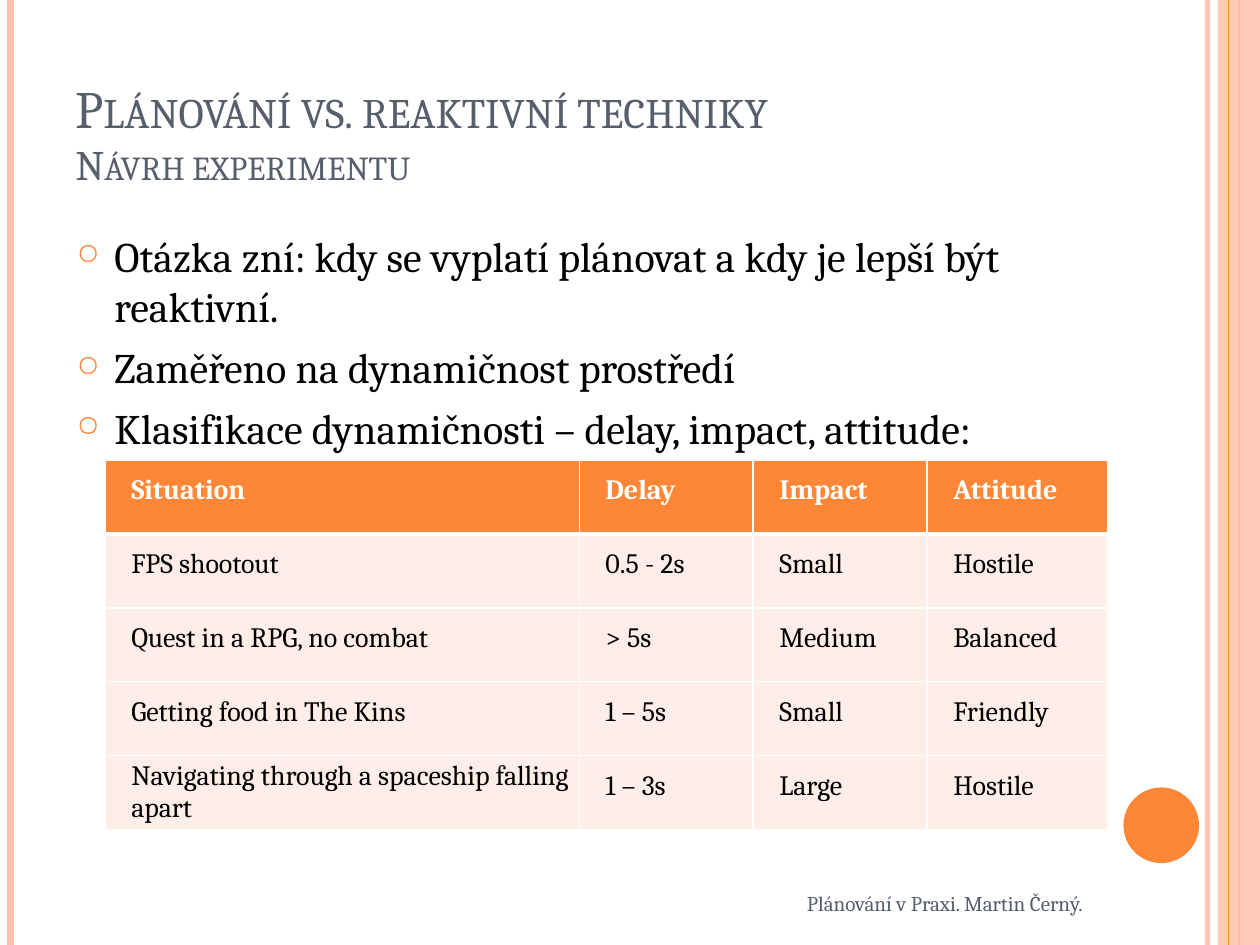
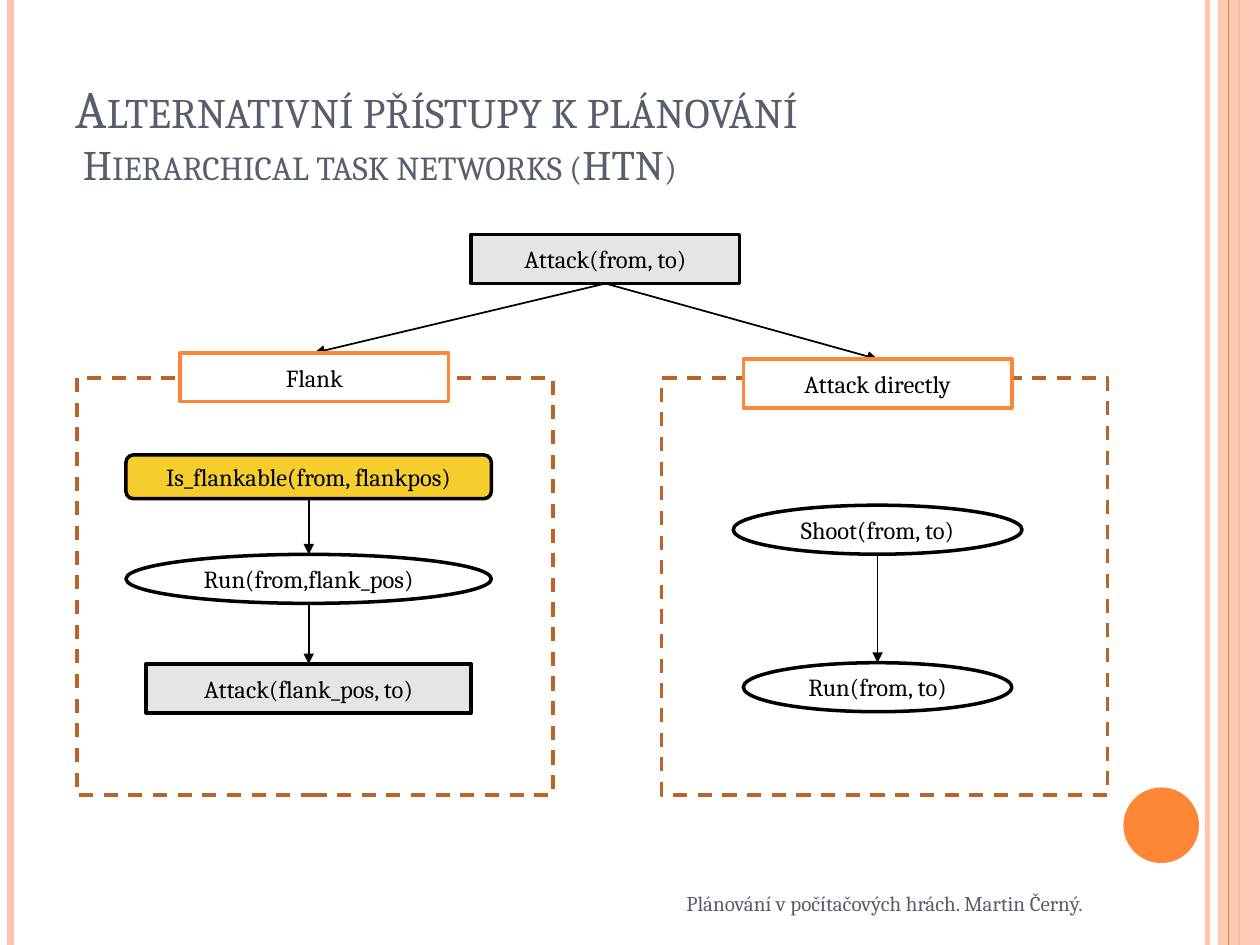
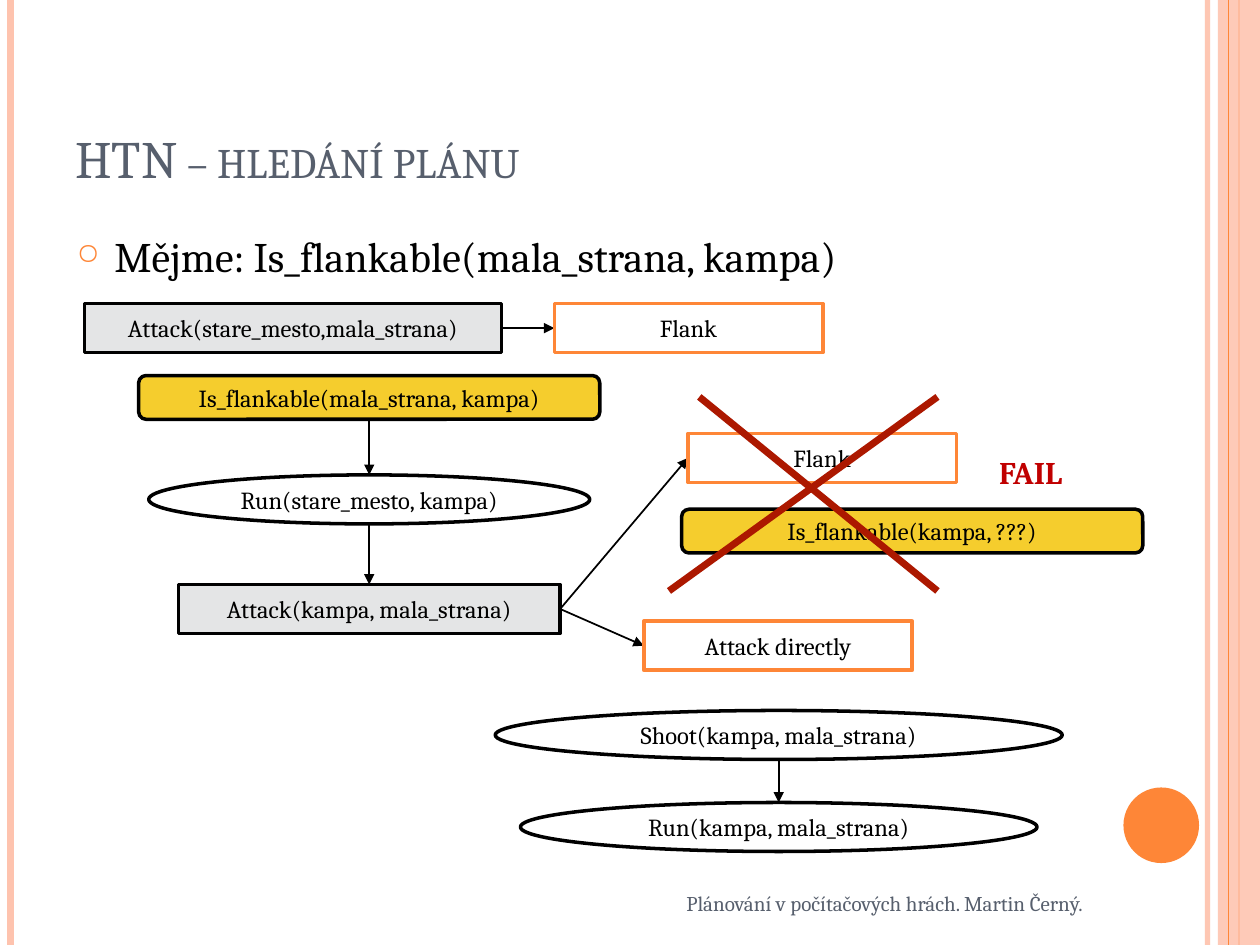
from lxml.etree import SubElement
from pptx import Presentation
from pptx.dml.color import RGBColor
from pptx.enum.dml import MSO_LINE
from pptx.enum.shapes import MSO_CONNECTOR, MSO_SHAPE
from pptx.enum.text import MSO_ANCHOR, PP_ALIGN
from pptx.oxml.ns import qn
from pptx.util import Pt

FONT = "Cambria"
INK, WHITE, SLATE = "000000", "FFFFFF", "575F6D"
ORANGE, PEACH, BLUSH, RUST = "FE8637", "FEC3AE", "FFEDE8", "BC6329"
GREY, YELLOW, RED, CROSS = "E4E5E6", "F5CD2D", "C00000", "AC1800"
WIDE, HIGH = 720, 540
RECT, OVAL, ROUND = MSO_SHAPE.RECTANGLE, MSO_SHAPE.OVAL, MSO_SHAPE.ROUNDED_RECTANGLE

# kind: (shape, fill, line, height)
KINDS = {
    "task": (RECT, GREY, INK, 28),
    "plan": (RECT, WHITE, ORANGE, 28),
    "act": (OVAL, WHITE, INK, 28),
    "test": (ROUND, YELLOW, INK, 25),
}

TALK = "Plánování v počítačových hrách. Martin Černý."

DESIGN = {
    "title": ["Plánování vs. reaktivní techniky", "Návrh experimentu"],
    "foot": "Plánování v Praxi. Martin Černý.",
    "points": [
        "Otázka zní: kdy se vyplatí plánovat a kdy je lepší být reaktivní.",
        "Zaměřeno na dynamičnost prostředí",
        "Klasifikace dynamičnosti – delay, impact, attitude:",
    ],
}
COLS = [271, 99.4, 99.4, 103.4]
ROWS = [
    ("Situation", "Delay", "Impact", "Attitude"),
    ("FPS shootout", "0.5 - 2s", "Small", "Hostile"),
    ("Quest in a RPG, no combat", "> 5s", "Medium", "Balanced"),
    ("Getting food in The Kins", "1 – 5s", "Small", "Friendly"),
    ("Navigating through a\u00a0spaceship falling apart", "1 – 3s", "Large", "Hostile"),
]

# node: (kind, text, centre x, top, width)
# link: (from node, side, to node, side)
NETWORK = {
    "title": ["Alternativní přístupy k plánování", " Hierarchical task networks (HTN)"],
    "foot": TALK,
    "panels": [(43.9, 272.2), (378, 254.9)],
    "nodes": {
        "root": ("task", "Attack(from, to)", 346, 134, 153.4),
        "flank": ("plan", "Flank", 179.7, 201.6, 153.4),
        "direct": ("plan", "Attack directly", 501.5, 205.2, 153.4),
        "check": ("test", "Is_flankable(from, flankpos)", 176.4, 260, 208.8),
        "run": ("act", "Run(from,flank_pos)", 176.4, 316.8, 208.8),
        "attack": ("task", "Attack(flank_pos, to)", 176.4, 379.4, 185.8),
        "shoot": ("act", "Shoot(from, to)", 501.5, 288.7, 165),
        "chase": ("act", "Run(from, to)", 501.5, 378.7, 153.4),
    },
    "links": [
        ("root", "bottom", "flank", "top"),
        ("root", "bottom", "direct", "top"),
        ("check", "bottom", "run", "top"),
        ("run", "bottom", "attack", "top"),
        ("shoot", "bottom", "chase", "top"),
    ],
}
SEARCH = {
    "title": ["HTN – hledání plánu"],
    "foot": TALK,
    "points": ["Mějme: Is_flankable(mala_strana, kampa)"],
    "nodes": {
        "root": ("task", "Attack(stare_mesto,mala_strana)", 167.4, 173.5, 238.3),
        "flank": ("plan", "Flank", 393.5, 173.5, 153.4),
        "check": ("test", "Is_flankable(mala_strana, kampa)", 211, 214.6, 263.5),
        "run": ("act", "Run(stare_mesto, kampa)", 211, 271.4, 252),
        "attack": ("task", "Attack(kampa, mala_strana)", 211, 334, 218.2),
        "retry": ("plan", "Flank", 469.8, 247.7, 153.4),
        "unknown": ("test", "Is_flankable(kampa, ???)", 521.3, 291, 263.5),
        "direct": ("plan", "Attack directly", 444.6, 355, 153.4),
        "shoot": ("act", "Shoot(kampa, mala_strana)", 445, 406, 324),
        "chase": ("act", "Run(kampa, mala_strana)", 445, 458.6, 295.2),
    },
    "links": [
        ("root", "right", "flank", "left"),
        ("check", "bottom", "run", "top"),
        ("run", "bottom", "attack", "top"),
        ("attack", "right", "retry", "left"),
        ("attack", "right", "direct", "left"),
        ("shoot", "bottom", "chase", "top"),
    ],
    "strikes": [(382.3, 337.7, 535.7, 226.8), (399.6, 226.8, 535.7, 337.7)],
}


def tint(hue):
    return RGBColor.from_string(hue)


def pts(*nums):
    return [Pt(num) for num in nums]


def fade(fill, share):
    """Give a solid fill or line element an opacity in percent."""
    hue = next(fill.iter(qn("a:srgbClr")))
    SubElement(hue, qn("a:alpha"), val=str(share * 1000))


def write(para, text, size, hue=INK, bold=False, small=False):
    run = para.add_run()
    run.text = text
    look = {"name": FONT, "size": Pt(size), "bold": bold}
    for key, val in look.items():
        setattr(run.font, key, val)
    run.font.color.rgb = tint(hue)
    if small:
        run.font._element.set("cap", "small")


def add_box(slide, spot, anchor=MSO_ANCHOR.TOP):
    frame = slide.shapes.add_textbox(*pts(*spot)).text_frame
    frame.word_wrap = True
    frame.vertical_anchor = anchor
    return frame


def add_form(slide, shape, spot, fill=None, line=None, dash=None):
    form = slide.shapes.add_shape(shape, *pts(*spot))
    form.shadow.inherit = False
    if fill:
        form.fill.solid()
        form.fill.fore_color.rgb = tint(fill)
    else:
        form.fill.background()
    if line:
        form.line.color.rgb = tint(line)
        form.line.width = Pt(2)
        form.line.dash_style = dash
    else:
        form.line.fill.background()
    return form


def add_line(slide, ends, hue, width, arrow=False):
    line = slide.shapes.add_connector(MSO_CONNECTOR.STRAIGHT, *pts(*ends))
    line.line.color.rgb = tint(hue)
    line.line.width = Pt(width)
    props = line._element.spPr
    if arrow:
        SubElement(props.find(qn("a:ln")), qn("a:tailEnd"), type="triangle")
    SubElement(props, qn("a:effectLst"))
    return line


def add_rule(slide, x, hue, width):
    return add_line(slide, (x, 0, x, HIGH), hue, width)


def add_frame(slide):
    """Draw the bands and the disc that every slide has."""
    edge = add_rule(slide, 690, PEACH, 3)
    fade(edge._element.spPr, 93)
    add_rule(slide, 6, PEACH, 4.5)
    add_rule(slide, 708, ORANGE, 1.5)
    band = add_form(slide, RECT, (696, 0, 24, HIGH), PEACH)
    fade(band._element.spPr, 87)
    add_rule(slide, 702, ORANGE, 0.75)
    add_form(slide, OVAL, (642, 450, 43.2, 43.2), ORANGE)


def add_title(slide, lines):
    para = add_box(slide, (36, 21.6, 588, 90), MSO_ANCHOR.BOTTOM).paragraphs[0]
    for rank, text in enumerate(lines):
        if rank:
            para.add_line_break()
        write(para, text, 24 if rank else 30, SLATE, small=True)


def add_foot(slide, text):
    para = add_box(slide, (195.5, 502.2, 430.5, 28), MSO_ANCHOR.MIDDLE).paragraphs[0]
    para.alignment = PP_ALIGN.RIGHT
    write(para, text, 12, SLATE)


def indent(para, left, first):
    props = para._p.get_or_add_pPr()
    props.set("marL", str(Pt(left)))
    props.set("indent", str(Pt(first)))
    return props


def add_points(slide, points):
    frame = add_box(slide, (36.7, 128.2, 588, 40 * len(points)))
    for rank, text in enumerate(points):
        para = frame.add_paragraph() if rank else frame.paragraphs[0]
        para.space_before = Pt(6)
        props = indent(para, 21.6, -21.6)
        hue = SubElement(props, qn("a:buClr"))
        SubElement(hue, qn("a:srgbClr"), val=ORANGE)
        SubElement(props, qn("a:buSzPct"), val="70000")
        SubElement(props, qn("a:buChar"), char="○")
        write(para, text, 24)


def add_edges(cell, head):
    props = cell._tc.get_or_add_tcPr()
    for side in "LRTB":
        width = 3 if head and side == "B" else 1
        line = SubElement(props, qn("a:ln" + side), w=str(Pt(width)))
        fill = SubElement(line, qn("a:solidFill"))
        SubElement(fill, qn("a:srgbClr"), val=WHITE)


def fill_cell(cell, text, head):
    add_edges(cell, head)
    cell.fill.solid()
    cell.fill.fore_color.rgb = tint(ORANGE if head else BLUSH)
    look = {
        "vertical_anchor": MSO_ANCHOR.MIDDLE,
        "margin_left": Pt(5), "margin_right": Pt(5),
        "margin_top": 0, "margin_bottom": 0,
    }
    for key, val in look.items():
        setattr(cell, key, val)
    para = cell.text_frame.paragraphs[0]
    if len(text) > 30:
        indent(para, 10, 0)
    else:
        indent(para, 0, 10)
        para.line_spacing = Pt(11)
    write(para, text, 16, WHITE if head else INK, bold=head)


def add_grid(slide):
    spot = (60, 263, sum(COLS), 42.2 * len(ROWS))
    table = slide.shapes.add_table(len(ROWS), len(COLS), *pts(*spot)).table
    for col, width in zip(table.columns, COLS):
        col.width = Pt(width)
    for r, row in enumerate(ROWS):
        for c, text in enumerate(row):
            fill_cell(table.cell(r, c), text, r == 0)


def find_port(node, side):
    """Return the middle of one side of a node."""
    kind, _, mid, top, width = node
    high = KINDS[kind][3]
    return {
        "top": (mid, top),
        "bottom": (mid, top + high),
        "left": (mid - width / 2, top + high / 2),
        "right": (mid + width / 2, top + high / 2),
    }[side]


def add_node(slide, kind, text, mid, top, width):
    shape, fill, line, high = KINDS[kind]
    form = add_form(slide, shape, (mid - width / 2, top, width, high), fill, line)
    frame = form.text_frame
    frame.word_wrap = True
    frame.vertical_anchor = MSO_ANCHOR.MIDDLE
    para = frame.paragraphs[0]
    para.alignment = PP_ALIGN.CENTER
    write(para, text, 14)


def add_graph(slide, data):
    nodes = data["nodes"]
    for left, width in data.get("panels", []):
        add_form(slide, RECT, (left, 216, width, 238.3), None, RUST, MSO_LINE.DASH)
    for start, out, end, into in data["links"]:
        ends = find_port(nodes[start], out) + find_port(nodes[end], into)
        add_line(slide, ends, INK, 1, arrow=True)
    for node in nodes.values():
        add_node(slide, *node)
    for ends in data.get("strikes", []):
        add_line(slide, ends, CROSS, 4)


def add_page(deck, data):
    slide = deck.slides.add_slide(deck.slide_layouts[6])
    add_frame(slide)
    add_title(slide, data["title"])
    add_foot(slide, data["foot"])
    if "points" in data:
        add_points(slide, data["points"])
    if "nodes" in data:
        add_graph(slide, data)
    return slide


def main():
    deck = Presentation()
    deck.slide_width, deck.slide_height = pts(WIDE, HIGH)
    add_grid(add_page(deck, DESIGN))
    add_page(deck, NETWORK)
    search = add_page(deck, SEARCH)
    fail = add_box(search, (563.8, 255.6, 85, 28.8))
    write(fail.paragraphs[0], "FAIL", 18, RED, bold=True)
    deck.save("out.pptx")


if __name__ == "__main__":
    main()
